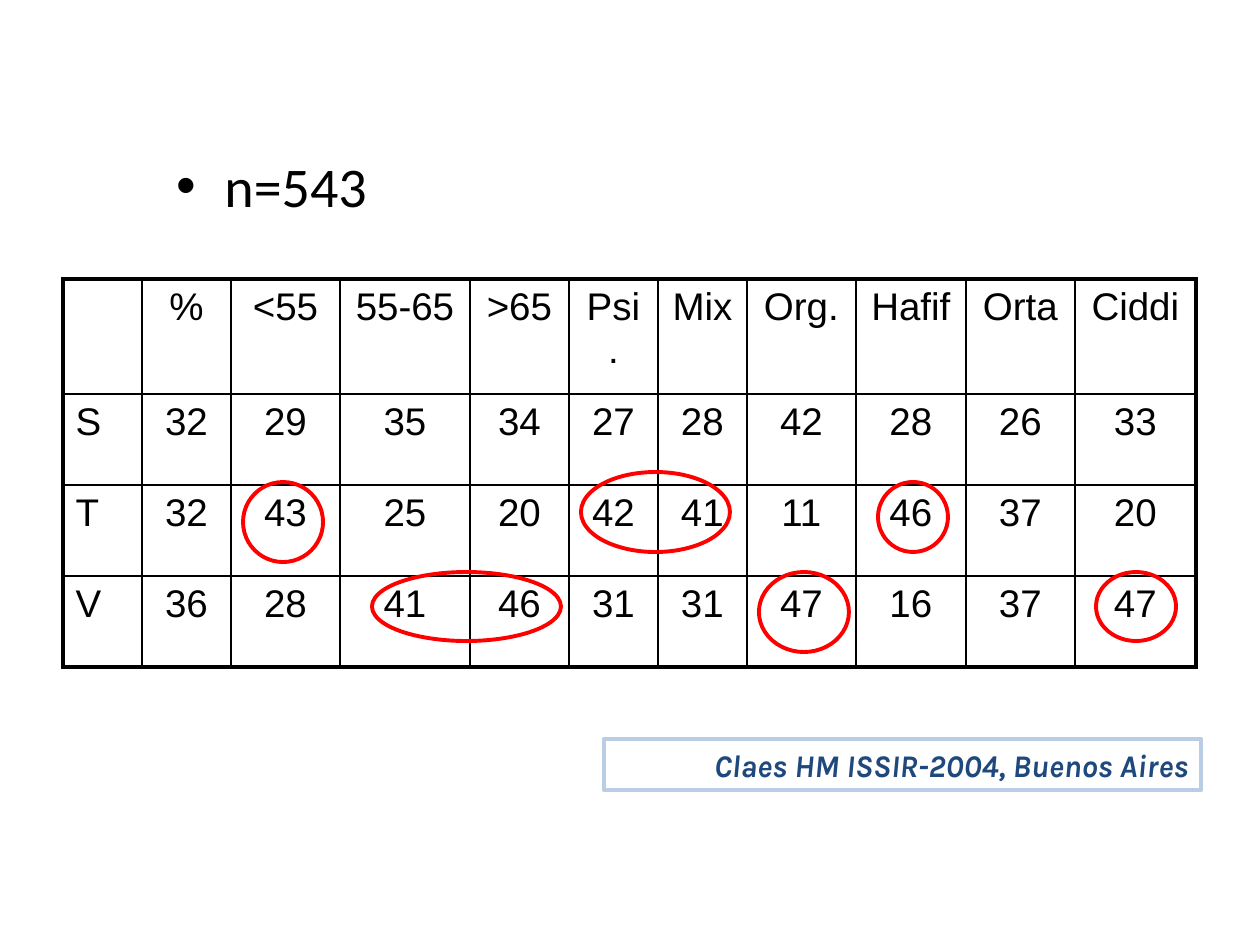
from lxml.etree import SubElement
from pptx import Presentation
from pptx.dml.color import RGBColor
from pptx.enum.shapes import MSO_SHAPE
from pptx.enum.text import PP_ALIGN
from pptx.oxml import parse_xml
from pptx.oxml.ns import nsdecls, qn
from pptx.util import Pt

EMU_PER_PX = 914400 / 126
COLORS = {"ink": "000000", "mark": "FF0000", "frame": "B9CDE5", "citation": "1F497D"}
COLUMN_WIDTHS = [79, 89, 109, 130, 99, 89, 89, 109, 110, 109, 121]
ROW_HEIGHTS = [115, 91, 91, 91]
RESULTS = [
    ["", "%", "<55", "55-65", ">65", "Psi.", "Mix", "Org.", "Hafif", "Orta", "Ciddi"],
    ["S", "32", "29", "35", "34", "27", "28", "42", "28", "26", "33"],
    ["T", "32", "43", "25", "20", "42", "41", "11", "46", "37", "20"],
    ["V", "36", "28", "41", "46", "31", "31", "47", "16", "37", "47"],
]
HIGHLIGHTS = [
    (243, 482, 80, 80),
    (372, 572, 189, 69),
    (581, 472, 149, 80),
    (759, 572, 90, 80),
    (878, 482, 70, 70),
    (1096, 572, 80, 69),
]


def px(length):
    """Turn pixels into EMU."""
    return round(length * EMU_PER_PX)


def color(name):
    """Look up a named colour."""
    return RGBColor.from_string(COLORS[name])


def add_run(paragraph, text, size, font, ink="ink", emphasis=None):
    """Add one formatted run to a paragraph."""
    run = paragraph.add_run()
    run.text = text
    run.font.size = Pt(size)
    run.font.name = font
    run.font.color.rgb = color(ink)
    run.font.bold = run.font.italic = emphasis


def add_bullet_line(slide, box, text):
    """Add a text box holding one bulleted line."""
    frame = slide.shapes.add_textbox(*map(px, box)).text_frame
    frame.word_wrap = True
    line = frame.paragraphs[0]
    properties = line._p.get_or_add_pPr()
    properties.set("marL", str(px(48)))
    properties.set("indent", str(px(-48)))
    SubElement(properties, qn("a:buFont"), typeface="Arial")
    SubElement(properties, qn("a:buChar"), char="•")
    add_run(line, text, 32, "Calibri")


def set_borders(cell, widths):
    """Draw the left, right, top and bottom borders of a cell."""
    properties = cell._tc.get_or_add_tcPr()
    for index, (side, width) in enumerate(zip("LRTB", widths)):
        border = parse_xml(
            f'<a:ln{side} {nsdecls("a")} w="{Pt(width)}"><a:solidFill>'
            f'<a:srgbClr val="{COLORS["ink"]}"/></a:solidFill></a:ln{side}>'
        )
        properties.insert(index, border)


def add_results_table(slide, left, top):
    """Add the results grid with a heavy outer border."""
    box = (left, top, sum(COLUMN_WIDTHS), sum(ROW_HEIGHTS))
    last_row, last_column = len(ROW_HEIGHTS) - 1, len(COLUMN_WIDTHS) - 1
    table = slide.shapes.add_table(last_row + 1, last_column + 1, *map(px, box)).table
    table.first_row = table.horz_banding = False
    for column, width in zip(table.columns, COLUMN_WIDTHS):
        column.width = px(width)
    for row, height in zip(table.rows, ROW_HEIGHTS):
        row.height = px(height)
    for r, values in enumerate(RESULTS):
        for c, value in enumerate(values):
            cell = table.cell(r, c)
            cell.fill.background()
            outer = (c == 0, c == last_column, r == 0, r == last_row)
            set_borders(cell, [2.25 if edge else 1 for edge in outer])
            if value:
                paragraph = cell.text_frame.paragraphs[0]
                paragraph.alignment = PP_ALIGN.CENTER if c else PP_ALIGN.LEFT
                add_run(paragraph, value, 22, "Arial")


def add_outline(slide, kind, box, line_color, width):
    """Add an unfilled preset shape."""
    shape = slide.shapes.add_shape(kind, *map(px, box))
    shape.shadow.inherit = False
    shape.fill.background()
    shape.line.color.rgb = color(line_color)
    shape.line.width = Pt(width)
    return shape


def add_citation(slide, box, text):
    """Add the framed source line."""
    frame = add_outline(slide, MSO_SHAPE.RECTANGLE, box, "frame", 2.5).text_frame
    frame.word_wrap = True
    source = frame.paragraphs[0]
    source.alignment = PP_ALIGN.RIGHT
    add_run(source, text, 18, "Karla", "citation", True)


def main():
    """Build and save the slide."""
    presentation = Presentation()
    presentation.slide_width, presentation.slide_height = px(1260), px(945)
    slide = presentation.slides.add_slide(presentation.slide_layouts[6])
    add_bullet_line(slide, (164, 145, 970, 693), "n=543")
    add_results_table(slide, 63, 279)
    for box in HIGHLIGHTS:
        add_outline(slide, MSO_SHAPE.OVAL, box, "mark", 2.25)
    add_citation(slide, (604, 739, 597, 51), "Claes HM ISSIR-2004, Buenos Aires")
    presentation.save("out.pptx")


if __name__ == "__main__":
    main()
